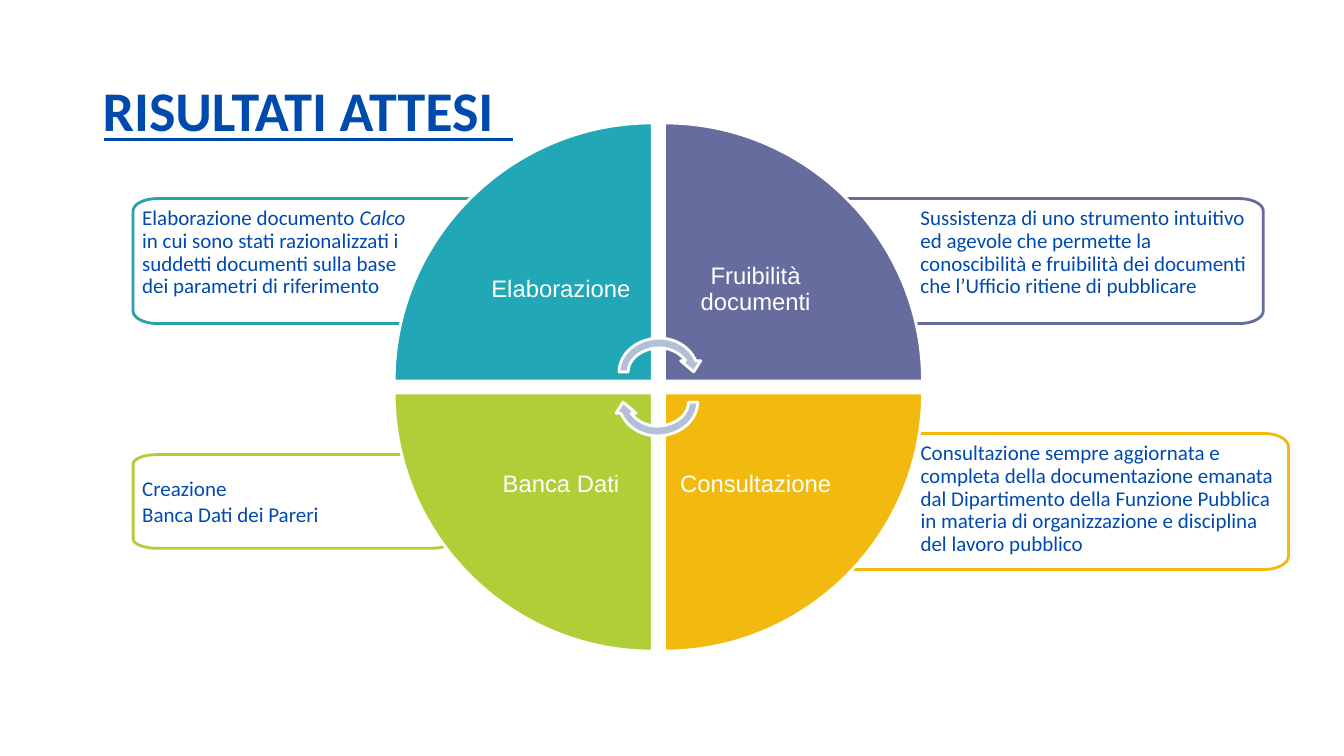
from pptx import Presentation
from pptx.dml.color import RGBColor
from pptx.enum.shapes import MSO_CONNECTOR
from pptx.enum.text import MSO_ANCHOR as ANCHOR, PP_ALIGN as ALIGN
from pptx.oxml.ns import qn
from pptx.util import Inches, Pt

BLUE, WHITE = "004AAD", "FFFFFF"
TEAL, PURPLE, YELLOW, GREEN = "21A7B6", "676C9F", "F2BA0E", "AFCE38"
ROUNDNESS = 0.55  # control point distance of a quarter ellipse


def color(hex_code):
    return RGBColor.from_string(hex_code)


def write(shape, text, insets, size, font="Calibri", ink=BLUE, bold=False,
          align=ALIGN.LEFT, anchor=ANCHOR.TOP):
    """Each line is a paragraph; words between asterisks are italic."""
    frame = shape.text_frame
    frame.word_wrap = True
    frame.vertical_anchor = anchor
    (frame.margin_left, frame.margin_top,
     frame.margin_right, frame.margin_bottom) = map(Inches, insets)
    for row, line in enumerate(text.split("\n")):
        paragraph = frame.add_paragraph() if row else frame.paragraphs[0]
        paragraph.alignment = align
        paragraph.line_spacing = 0.9
        paragraph.space_before = Pt(2.2 if row else 0)
        for part, words in enumerate(line.split("*")):
            run = paragraph.add_run()
            run.text = words
            run.font.name, run.font.size = font, Pt(size)
            run.font.bold, run.font.italic = bold, part % 2 == 1
            run.font.color.rgb = color(ink)


presentation = Presentation()
presentation.slide_width, presentation.slide_height = Inches(13.33), Inches(7.5)
slide = presentation.slides.add_slide(presentation.slide_layouts[6])

# Each outline: segments, fill, opacity, line, text, text format.
# A segment of one point is a line, of two (corner, end) a quarter ellipse,
# of three a Bezier curve.
outlines = []

# Description boxes: left, top, width, height, line, insets, text
boxes = [
    (7.87, 4.3, 4.91, 1.35, YELLOW, (1.26, 0.09, 0.1, 0.1),
     "Consultazione sempre aggiornata e completa della documentazione emanata "
     "dal Dipartimento della Funzione Pubblica in materia di organizzazione "
     "e disciplina del lavoro pubblico"),
    (1.32, 4.51, 3.19, 0.93, GREEN, (0.09, 0.24, 0.97, 0.1),
     "Creazione\nBanca Dati dei Pareri"),
    (7.87, 1.97, 4.66, 1.24, PURPLE, (1.26, 0.09, 0.1, 0.1),
     "Sussistenza di uno strumento intuitivo ed agevole che permette la "
     "conoscibilità e fruibilità dei documenti che l’Ufficio ritiene di "
     "pubblicare"),
    (1.32, 1.97, 3.77, 1.24, "29A1B0", (0.09, 0.09, 0.97, 0.1),
     "Elaborazione documento *Calco *in cui sono stati razionalizzati i "
     "suddetti documenti sulla base dei parametri di riferimento"),
]
for left, top, width, height, line, insets, text in boxes:
    right, bottom = left + width, top + height
    radius_x, radius_y = 0.24, height / 10
    segments = [
        [(left, top + radius_y)],
        [(left, top), (left + radius_x, top)],
        [(right - radius_x, top)],
        [(right, top), (right, top + radius_y)],
        [(right, bottom - radius_y)],
        [(right, bottom), (right - radius_x, bottom)],
        [(left + radius_x, bottom)],
        [(left, bottom), (left, bottom - radius_y)],
    ]
    outlines.append((segments, WHITE, 90, line, text, dict(insets=insets, size=15)))

# Quarters of the wheel, around a gap: side, level, fill, label
center_x, center_y, gap, radius = 6.53, 3.84, 0.06, 2.56
quarters = [(-1, -1, TEAL, "Elaborazione"), (1, -1, PURPLE, "Fruibilità documenti"),
            (1, 1, YELLOW, "Consultazione"), (-1, 1, GREEN, "Banca Dati")]
for side, level, fill, label in quarters:
    x, y = center_x + side * gap, center_y + level * gap
    edge_x, edge_y = x + side * radius, y + level * radius
    segments = [[(edge_x, y)], [(edge_x, edge_y), (x, edge_y)], [(x, y)]]
    insets = (0.88 if side < 0 else 0.13, 0.88 if level < 0 else 0.13,
              0.13 if side < 0 else 0.88, 0.13 if level < 0 else 0.88)
    outlines.append((segments, fill, 100, WHITE, label, dict(
        insets=insets, size=17, font="Arial", ink=WHITE,
        align=ALIGN.CENTER, anchor=ANCHOR.MIDDLE)))

# Rotation arrows: the lower one is the upper one turned by 180 degrees
arrow = [
    [(-0.39, -0.15)],
    [(-0.39, -0.31), (-0.25, -0.45), (-0.06, -0.48)],
    [(0.13, -0.51), (0.31, -0.41), (0.37, -0.26)],
    [(0.42, -0.26)], [(0.35, -0.15)], [(0.22, -0.26)], [(0.27, -0.26)],
    [(0.2, -0.36), (0.06, -0.41), (-0.07, -0.38)],
    [(-0.2, -0.35), (-0.3, -0.26), (-0.3, -0.15)],
]
for turn in (1, -1):
    segments = [[(center_x + turn * x, center_y + turn * y) for x, y in segment]
                for segment in arrow]
    outlines.append((segments, "B1C0D7", 100, WHITE, "", {}))

# Draw the outlines from back to front
for segments, fill, opacity, line, text, text_format in outlines:
    points, curve_starts = [], []
    for segment in segments:
        if len(segment) == 2:
            corner, end = segment
            controls = [tuple(a + ROUNDNESS * (b - a) for a, b in zip(anchor, corner))
                        for anchor in (points[-1], end)]
            segment = controls + [end]
        if len(segment) == 3:
            curve_starts.append(len(points) - 1)
        points += segment
    points = [(Inches(x), Inches(y)) for x, y in points]
    builder = slide.shapes.build_freeform(*points[0])
    builder.add_line_segments(points[1:], close=True)
    shape = builder.convert_to_shape()

    # Turn the three steps of each curve into one Bezier segment
    steps = list(shape._element.iter(qn("a:lnTo")))
    for start in curve_starts:
        curve = steps[start].makeelement(qn("a:cubicBezTo"), {})
        steps[start].addprevious(curve)
        for step in steps[start:start + 3]:
            curve.append(step[0])
            step.getparent().remove(step)

    shape.shadow.inherit = False
    shape.fill.solid()
    shape.fill.fore_color.rgb = color(fill)
    if opacity < 100:
        tint = shape._element.spPr.find(qn("a:solidFill"))[0]
        tint.append(tint.makeelement(qn("a:alpha"), {"val": str(opacity * 1000)}))
    shape.line.color.rgb = color(line)
    shape.line.width = Pt(2)
    if text:
        write(shape, text, **text_format)

# Title and its rule
title = slide.shapes.add_textbox(Inches(0.92), Inches(0.4), Inches(11.5), Inches(1.45))
write(title, "RISULTATI ATTESI", (0.1, 0.05, 0.1, 0.05), 40, bold=True,
      anchor=ANCHOR.MIDDLE)
rule = slide.shapes.add_connector(MSO_CONNECTOR.STRAIGHT, Inches(1.03), Inches(1.38),
                                  Inches(5.09), Inches(1.38))
rule.line.color.rgb = color(BLUE)
rule.line.width = Pt(2.25)
properties = rule._element.spPr
properties.append(properties.makeelement(qn("a:effectLst"), {}))

presentation.save("out.pptx")
